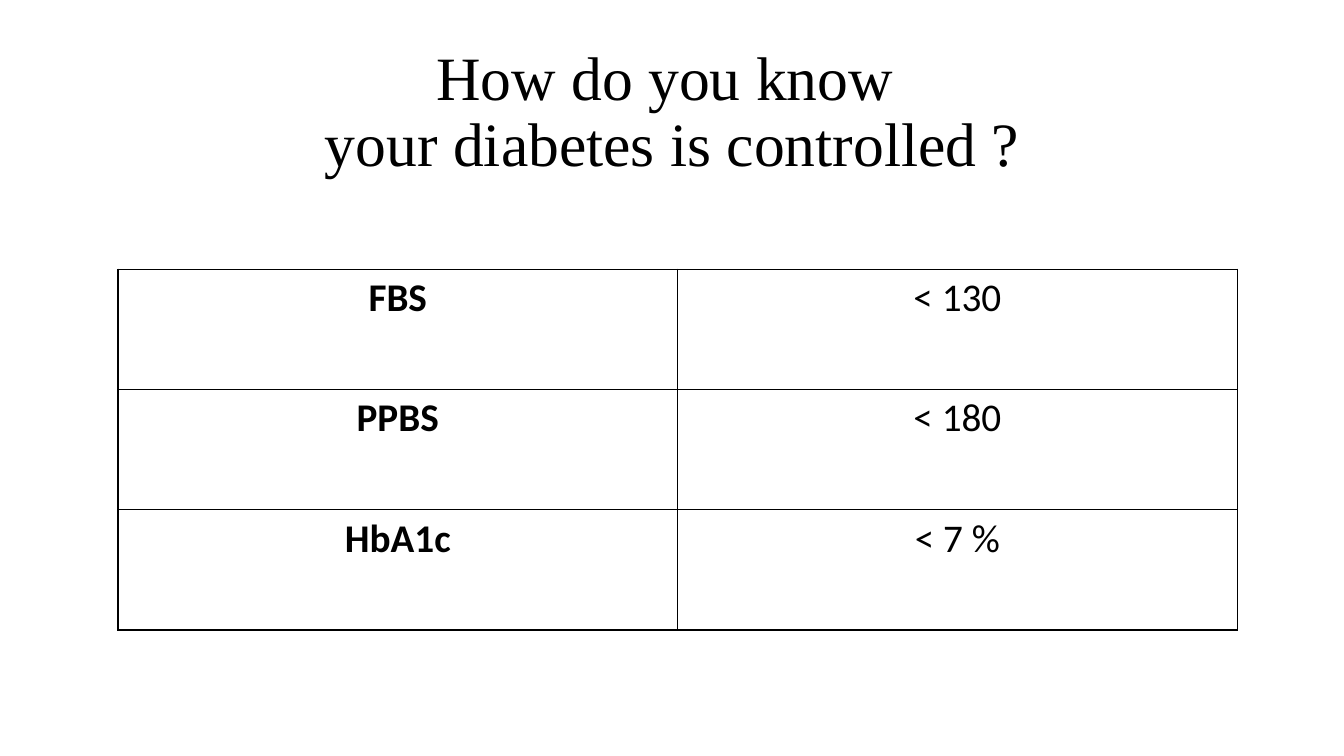
from lxml import etree
from pptx import Presentation
from pptx import util as u
from pptx.dml.color import RGBColor
from pptx.enum import text
from pptx.oxml import ns

BLACK = "000000"
WIDTH, HEIGHT = u.Inches(13.33), u.Inches(7.5)


def color(hex_string):
    return RGBColor.from_string(hex_string)


def write(frame, content, size=28, font="Calibri", bold=False, spacing=None):
    frame.text = content
    for paragraph in frame.paragraphs:
        paragraph.alignment = text.PP_ALIGN.CENTER
        paragraph.line_spacing = spacing
        for run in paragraph.runs:
            run.font.size = u.Pt(size)
            run.font.name = font
            run.font.bold = bold
            run.font.color.rgb = color(BLACK)


deck = Presentation()
deck.slide_width, deck.slide_height = WIDTH, HEIGHT
slide = deck.slides.add_slide(deck.slide_layouts[5])

# Heading
heading = slide.shapes.title
heading.left, heading.top = u.Inches(0.92), u.Inches(0.4)
heading.width, heading.height = u.Inches(11.5), u.Inches(1.45)
write(heading.text_frame, "How do you know \vyour diabetes is controlled ?",
      size=44, font="Times New Roman", spacing=0.9)
heading.text_frame.vertical_anchor = text.MSO_ANCHOR.MIDDLE
heading.text_frame.auto_size = text.MSO_AUTO_SIZE.NONE

# Control targets: test and its limit
targets = [("FBS", "< 130"), ("PPBS", "< 180"), ("HbA1c", "< 7 %")]
target_table = slide.shapes.add_table(
    len(targets), 2, u.Inches(1.17), u.Inches(2.67), u.Inches(11.1), u.Inches(3.58)
).table
target_table.first_row = False
target_table.horz_banding = False

for row, target in enumerate(targets):
    for column, label in enumerate(target):
        cell = target_table.cell(row, column)
        write(cell.text_frame, label, bold=column == 0)
        properties = cell._tc.get_or_add_tcPr()
        for side in ("lnL", "lnR", "lnT", "lnB"):
            border = etree.SubElement(properties, ns.qn(f"a:{side}"), w=str(u.Pt(1)))
            stroke = etree.SubElement(border, ns.qn("a:solidFill"))
            etree.SubElement(stroke, ns.qn("a:srgbClr"), val=BLACK)
        cell.fill.background()

deck.save("out.pptx")
